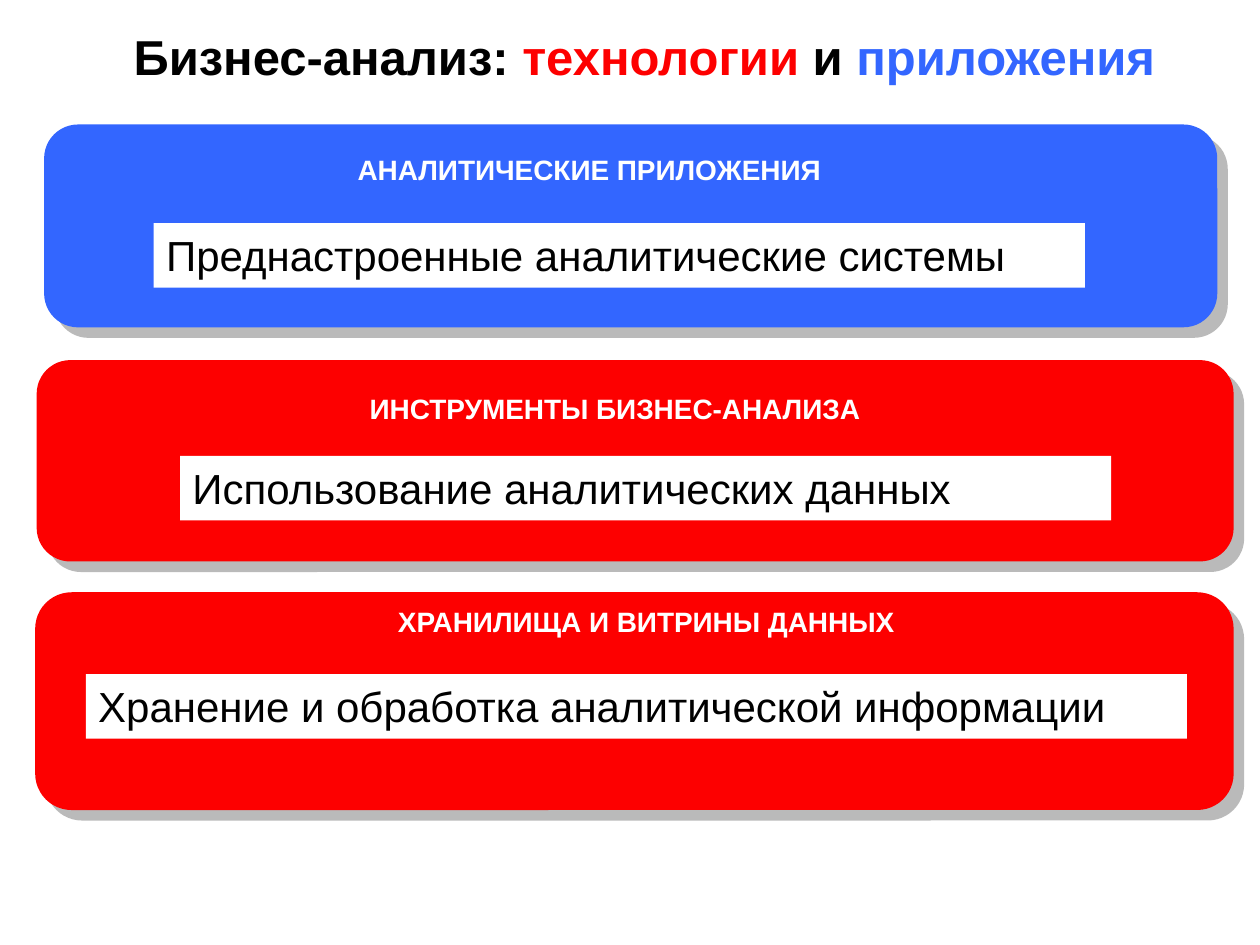
from lxml.etree import SubElement
from pptx import Presentation
from pptx.dml.color import RGBColor
from pptx.enum.shapes import MSO_SHAPE as Shape
from pptx.enum.text import MSO_ANCHOR as Anchor, PP_ALIGN as Align
from pptx.oxml.ns import qn
from pptx.util import Cm, Pt

COLORS = {"black": "000000", "white": "FFFFFF", "red": "FD0000",
          "blue": "3366FF", "shade": "777777"}
FONT = "Arial"
TITLE = [("Бизнес-анализ: ", "black"), ("технологии", "red"),
         (" и ", "black"), ("приложения", "blue")]
# Boxes are left, top, width, height in cm; layers run from bottom to top.
LAYERS = [
    {"fill": "red", "panel": (0.71, 11.94, 24.16, 4.39),
     "head": "ХРАНИЛИЩА И ВИТРИНЫ ДАННЫХ",
     "head_box": (2.97, 11.89, 20.12, 1.27), "align": Align.CENTER,
     "note": "Хранение и обработка аналитической информации",
     "note_box": (1.73, 13.59, 22.2, 1.3)},
    {"fill": "red", "panel": (0.74, 7.26, 24.13, 4.06),
     "head": "ИНСТРУМЕНТЫ БИЗНЕС-АНАЛИЗА",
     "head_box": (2.34, 7.59, 20.12, 1.27), "align": Align.CENTER,
     "note": "Использование аналитических данных",
     "note_box": (3.63, 9.19, 18.77, 1.3)},
    {"fill": "blue", "panel": (0.89, 2.51, 23.65, 4.09),
     "head": "АНАЛИТИЧЕСКИЕ ПРИЛОЖЕНИЯ",
     "head_box": (6.96, 2.77, 12.04, 1.27), "align": Align.LEFT,
     "note": "Преднастроенные аналитические системы",
     "note_box": (3.1, 4.5, 18.77, 1.3)},
]


def rgb(name):
    return RGBColor.from_string(COLORS[name])


def place(box):
    return [Cm(n) for n in box]


def style(run, size, color, bold=False):
    font = run.font
    font.name, font.size, font.bold = FONT, Pt(size), bold
    font.color.rgb = rgb(color)


def add_block(shapes, kind, box, fill):
    block = shapes.add_shape(kind, *place(box))
    block.fill.solid()
    block.fill.fore_color.rgb = rgb(fill)
    block.line.fill.background()
    block.shadow.inherit = False
    return block


def cast_shadow(block):
    """Add a sharp, half-transparent shadow to the lower right."""
    effects = block._element.spPr.find(qn("a:effectLst"))
    shadow = SubElement(effects, qn("a:outerShdw"), blurRad="0",
                        dist=str(Pt(8.5)), dir="2700000",
                        algn="ctr", rotWithShape="0")
    color = SubElement(shadow, qn("a:srgbClr"), val=COLORS["shade"])
    SubElement(color, qn("a:alpha"), val="50000")


def add_title(slide):
    frame = slide.shapes.add_textbox(*place((2.46, 0.53, 21.06, 1.83))).text_frame
    frame.word_wrap = True
    frame.margin_left = frame.margin_right = 0
    frame.margin_top = frame.margin_bottom = 0
    para = frame.paragraphs[0]
    para.alignment = Align.CENTER
    for text, color in TITLE:
        run = para.add_run()
        run.text = text
        style(run, 28, color, True)


def add_layer(slide, layer):
    shapes = slide.shapes.add_group_shape().shapes
    panel = add_block(shapes, Shape.ROUNDED_RECTANGLE, layer["panel"], layer["fill"])
    panel.adjustments[0] = 0.167
    cast_shadow(panel)

    frame = shapes.add_textbox(*place(layer["head_box"])).text_frame
    frame.word_wrap = True
    frame.vertical_anchor = Anchor.MIDDLE
    frame.text = layer["head"]
    para = frame.paragraphs[0]
    para.alignment = layer["align"]
    style(para.runs[0], 16, "white", True)

    frame = add_block(shapes, Shape.RECTANGLE, layer["note_box"], "white").text_frame
    frame.word_wrap = True
    frame.vertical_anchor = Anchor.TOP
    frame.text = layer["note"]
    para = frame.paragraphs[0]
    para.alignment = Align.LEFT
    props = para._p.get_or_add_pPr()
    props.set("marL", str(Cm(0.33)))
    props.set("indent", str(-Cm(0.33)))
    style(para.runs[0], 24, "black")


def main():
    deck = Presentation()
    deck.slide_width, deck.slide_height = Cm(25.4), Cm(19.05)
    slide = deck.slides.add_slide(deck.slide_layouts[6])
    add_title(slide)
    for layer in LAYERS:
        add_layer(slide, layer)
    deck.save("out.pptx")


if __name__ == "__main__":
    main()
